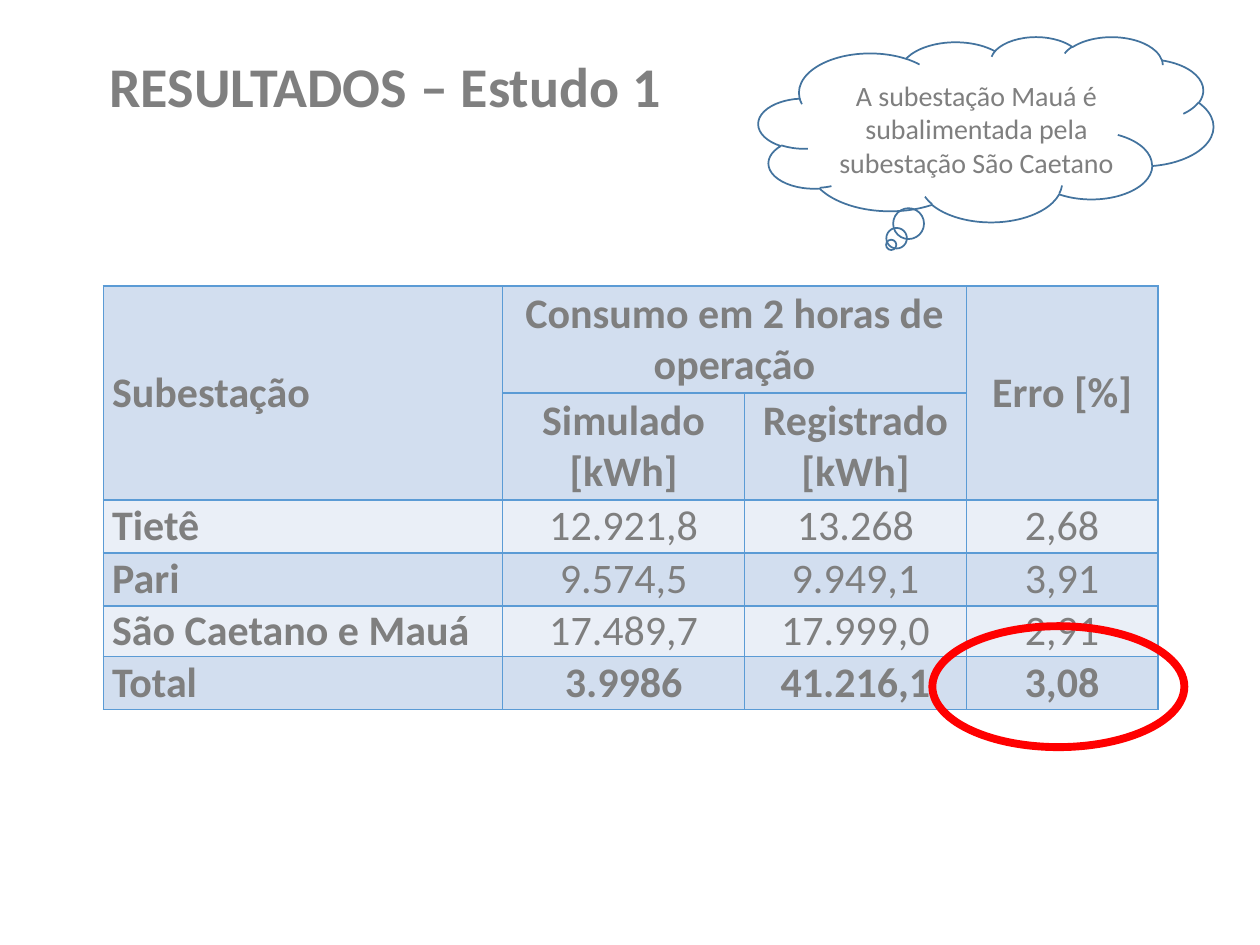
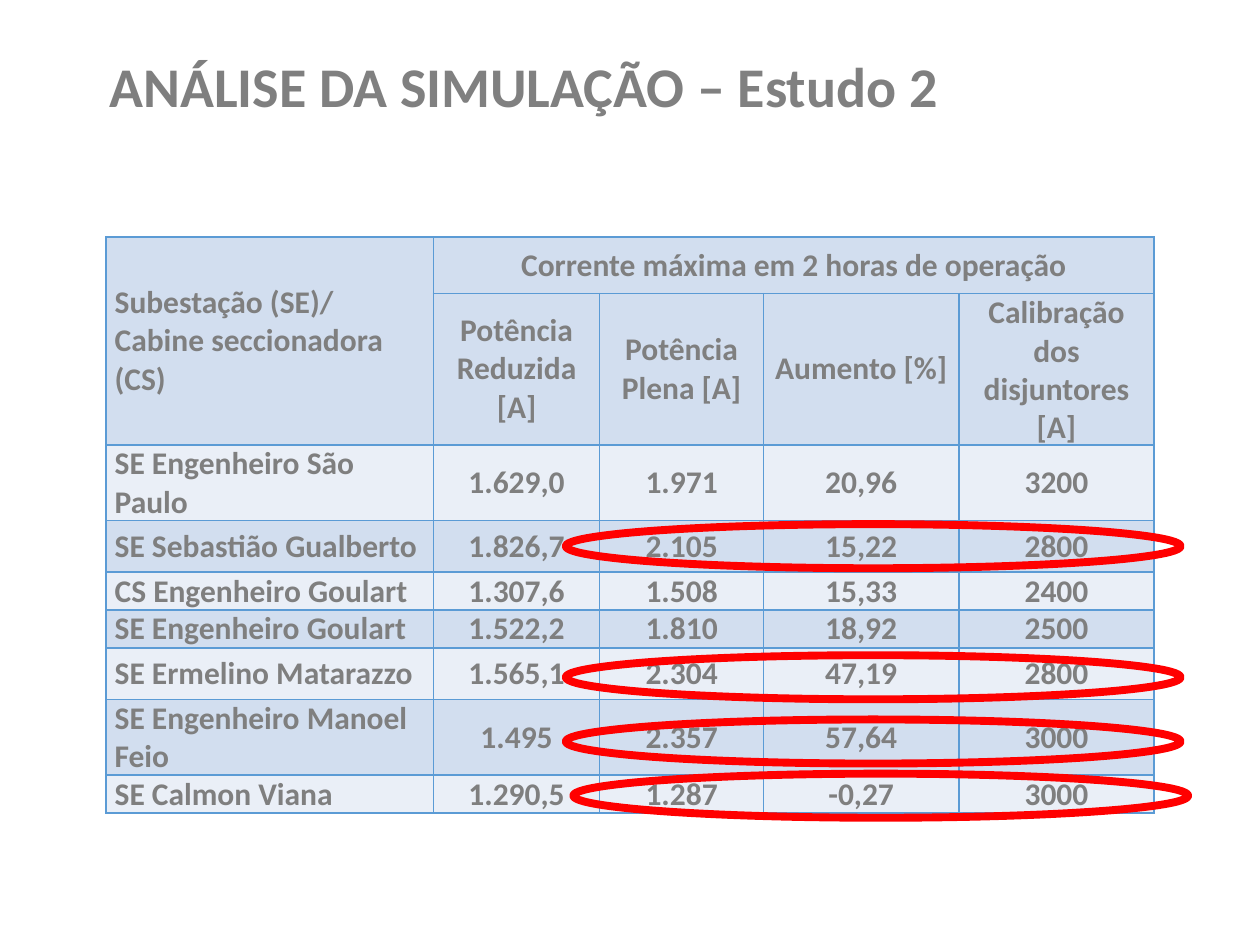
"""Builds two result slides, each with a titled table and ringed values."""
from dataclasses import dataclass

from lxml.etree import SubElement
from pptx import Presentation
from pptx.dml.color import RGBColor as RGB
from pptx.enum.shapes import MSO_SHAPE as SHAPE
from pptx.enum.text import MSO_ANCHOR as ANCHOR, MSO_AUTO_SIZE as AUTO, PP_ALIGN as ALIGN
from pptx.oxml.ns import qn
from pptx.util import Inches, Pt


@dataclass(frozen=True)
class Theme:
    font: str = "Calibri"
    text: str = "7F7F7F"
    title_end: str = "808080"
    band_dark: str = "D2DEEF"
    band_light: str = "EAEFF7"
    border: str = "5B9BD5"
    cloud: str = "43739E"
    ring: str = "FF0000"
    title_size: int = 32
    note_size: int = 16
    thin: float = 1
    thick: float = 4.5


T = Theme()
prs = Presentation()
prs.slide_width, prs.slide_height = Inches(10), Inches(7.5)
COL, ROW = prs.slide_width / 100, prs.slide_height / 75

TITLE_AT = (7.7, 3.9, 77.3, 6.4)
TITLE_FRAME = {"word_wrap": True, "vertical_anchor": ANCHOR.MIDDLE}
NOTE_FRAME = {"word_wrap": True, "auto_size": AUTO.SHAPE_TO_FIT_TEXT}
TABLE_FORMAT = {"first_row": False, "horz_banding": False}
CELL_FORMAT = {
    "vertical_anchor": ANCHOR.MIDDLE,
    "margin_left": Inches(0.07), "margin_right": Inches(0.07),
    "margin_top": 0, "margin_bottom": 0,
}

SLIDES = [
    {
        "title": [("RESULTADOS ", T.text), ("– Estudo 1", T.title_end)],
        "at": (8.2, 22.7),
        "cols": [31.7, 19.2, 17.6, 15.2],
        "rows": [8.5, 8.5, 4.2, 4.2, 3.5, 4.2],
        "size": 24,
        "label_align": ALIGN.JUSTIFY,
        "bold_rows": {0, 1, 5},
        "merges": [(0, 0, 1, 0), (0, 1, 0, 2), (0, 3, 1, 3)],
        "cells": [
            ["Subestação", "Consumo em 2 horas de operação", "", "Erro [%]"],
            ["", "Simulado [kWh]", "Registrado [kWh]", ""],
            ["Tietê", "12.921,8", "13.268", "2,68"],
            ["Pari", "9.574,5", "9.949,1", "3,91"],
            ["São Caetano e Mauá", "17.489,7", "17.999,0", "2,91"],
            ["Total", "3.9986", "41.216,1", "3,08"],
        ],
        "note": "A subestação Mauá é subalimentada pela subestação São Caetano",
        "rings": [(74, 49.7, 20, 9.6)],
    },
    {
        "title": [("ANÁLISE", T.text), (" DA SIMULAÇÃO – Estudo 2", T.title_end)],
        "at": (8.4, 18.8),
        "cols": [26, 13.2, 13, 15.5, 15.5],
        "rows": [4.5, 11.7, 5.8, 4.1, 2.9, 2.9, 4.1, 5.8, 2.9],
        "size": 18,
        "label_align": ALIGN.LEFT,
        "bold_rows": set(range(9)),
        "merges": [(0, 0, 1, 0), (0, 1, 0, 4)],
        "cells": [
            ["Subestação (SE)/\nCabine seccionadora (CS)",
             "Corrente máxima em 2 horas de operação", "", "", ""],
            ["", "Potência Reduzida [A]", "Potência Plena [A]", "Aumento [%]",
             "Calibração dos disjuntores [A]"],
            ["SE Engenheiro São Paulo", "1.629,0", "1.971", "20,96", "3200"],
            ["SE Sebastião Gualberto", "1.826,7", "2.105", "15,22", "2800"],
            ["CS Engenheiro Goulart", "1.307,6", "1.508", "15,33", "2400"],
            ["SE Engenheiro Goulart", "1.522,2", "1.810", "18,92", "2500"],
            ["SE Ermelino Matarazzo", "1.565,1", "2.304", "47,19", "2800"],
            ["SE Engenheiro Manoel Feio", "1.495", "2.357", "57,64", "3000"],
            ["SE Calmon Viana", "1.290,5", "1.287", "-0,27", "3000"],
        ],
        "note": None,
        "rings": [(left, top, 48.8, 3.5) for left, top in
                  [(44.9, 41.6), (44.9, 52), (44.9, 57.1), (45.5, 61.4)]],
    },
]


def box(left, top, width, height):
    return [round(n) for n in (left * COL, top * ROW, width * COL, height * ROW)]


def apply(obj, values, color=None):
    for name, value in values.items():
        setattr(obj, name, value)
    if color:
        obj.color.rgb = RGB.from_string(color)


for spec in SLIDES:
    s = prs.slides.add_slide(prs.slide_layouts[6])

    tf = s.shapes.add_textbox(*box(*TITLE_AT)).text_frame
    apply(tf, TITLE_FRAME)
    p = tf.paragraphs[0]
    p.line_spacing = 0.9
    for text, color in spec["title"]:
        r = p.add_run()
        r.text = text
        apply(r.font, {"name": T.font, "size": Pt(T.title_size), "bold": True}, color)

    cols, rows = spec["cols"], spec["rows"]
    tbl = s.shapes.add_table(len(rows), len(cols),
                             *box(*spec["at"], sum(cols), sum(rows))).table
    apply(tbl, TABLE_FORMAT)
    for column, width in zip(tbl.columns, cols):
        column.width = round(width * COL)
    for row, height in zip(tbl.rows, rows):
        row.height = round(height * ROW)
    for i, texts in enumerate(spec["cells"]):
        band = T.band_light if i > 1 and i % 2 == 0 else T.band_dark
        for j, text in enumerate(texts):
            cell = tbl.cell(i, j)
            apply(cell, CELL_FORMAT)
            tcPr = cell._tc.get_or_add_tcPr()
            for side in ("lnL", "lnR", "lnT", "lnB"):
                ln = SubElement(tcPr, qn(f"a:{side}"), w=str(Pt(T.thin)))
                fill = SubElement(ln, qn("a:solidFill"))
                SubElement(fill, qn("a:srgbClr"), val=T.border)
            cell.fill.solid()
            cell.fill.fore_color.rgb = RGB.from_string(band)
            cell.text_frame.text = text
            bold = j == 0 or i in spec["bold_rows"]
            for p in cell.text_frame.paragraphs:
                p.alignment = ALIGN.CENTER if j else spec["label_align"]
                for font in [p.font] + [r.font for r in p.runs]:
                    apply(font, {"name": T.font, "size": Pt(spec["size"]), "bold": bold}, T.text)
    for top, left, bottom, right in spec["merges"]:
        tbl.cell(top, left).merge(tbl.cell(bottom, right))

    outlines = [(SHAPE.OVAL, at, T.ring, T.thick) for at in spec["rings"]]
    if spec["note"]:
        tf = s.shapes.add_textbox(*box(63.2, 5.7, 28.6, 9.1)).text_frame
        apply(tf, NOTE_FRAME)
        p = tf.paragraphs[0]
        p.alignment = ALIGN.CENTER
        r = p.add_run()
        r.text = spec["note"]
        apply(r.font, {"name": T.font, "size": Pt(T.note_size)}, T.text)
        outlines.insert(0, (SHAPE.CLOUD_CALLOUT, (60.2, 2.9, 36.1, 14.7), T.cloud, T.thin))
    for kind, at, color, width in outlines:
        sp = s.shapes.add_shape(kind, *box(*at))
        sp.shadow.inherit = False
        sp.fill.background()
        apply(sp.line, {"width": Pt(width)}, color)

prs.save("out.pptx")
